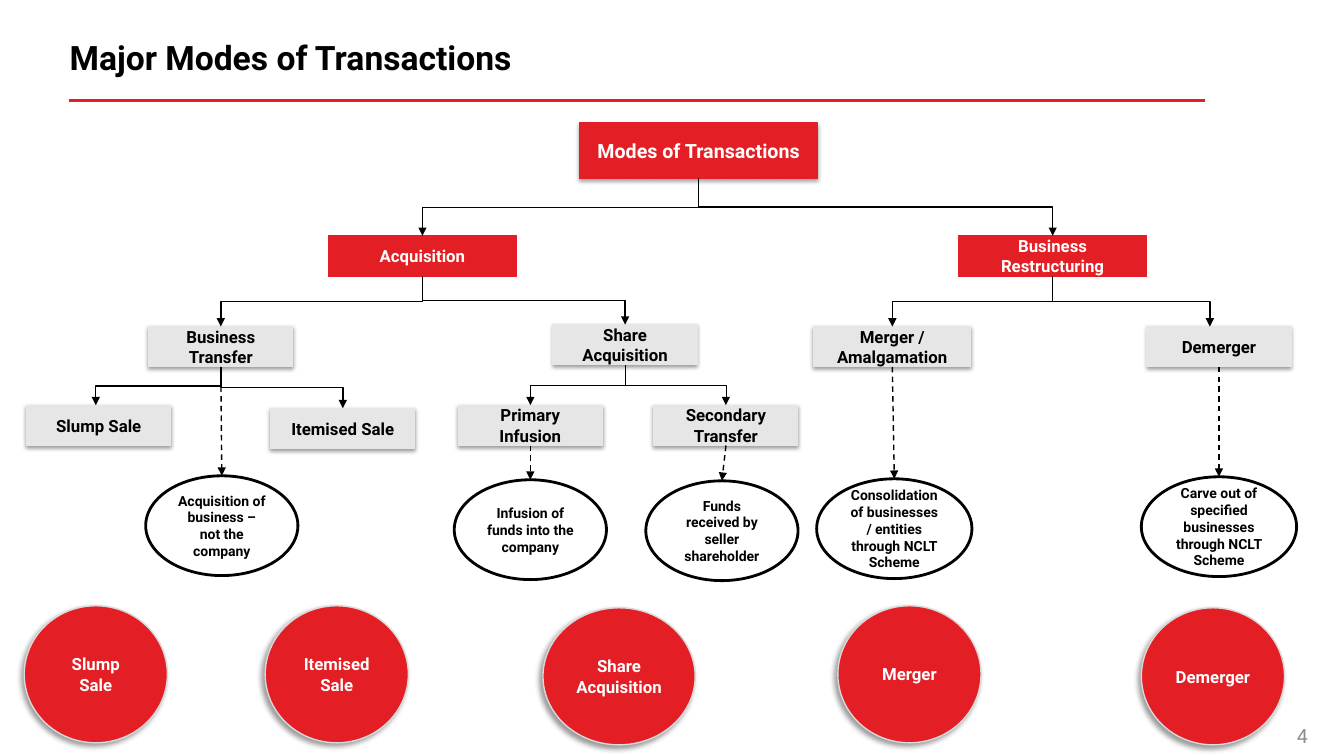
from lxml.etree import SubElement
from pptx import Presentation
from pptx.dml.color import RGBColor
from pptx.enum.dml import MSO_LINE_DASH_STYLE as Dash
from pptx.enum.shapes import MSO_CONNECTOR as Link, MSO_SHAPE as Geometry
from pptx.enum.text import MSO_ANCHOR as Anchor, MSO_AUTO_SIZE as AutoSize, PP_ALIGN as Align
from pptx.oxml.ns import qn
from pptx.util import Inches, Pt

FONT = "Roboto"
COLORS = {"red": "E31E24", "grey": "E7E6E6", "rim": "D9D9D9", "number": "8C8C8C",
          "white": "FFFFFF", "black": "000000"}
TITLE = "Major Modes of Transactions"
PAGE = "4"

# geometry, width, height, fill, outline, outline points, text colour, text points,
# shadow (opacity %, blur points, distance points, degrees)
STYLES = {
    "root": (Geometry.RECTANGLE, 2.36, 0.55, "red", "red", 0.75, "white", 14, (35, 3.1, 1.8, 90)),
    "branch": (Geometry.RECTANGLE, 1.87, 0.4, "red", "red", 0.75, "white", 12, None),
    "mode": (Geometry.RECTANGLE, 1.43, 0.4, "grey", "grey", 0.75, "black", 12, (38, 3.1, 1.6, 90)),
    "wide mode": (Geometry.RECTANGLE, 1.56, 0.4, "grey", "grey", 0.75, "black", 12, (38, 3.1, 1.6, 90)),
    "note": (Geometry.OVAL, 1.51, 0.99, "white", "black", 2, "black", 10, None),
    "wide note": (Geometry.OVAL, 1.54, 0.99, "white", "black", 2, "black", 10, None),
    "circle": (Geometry.OVAL, 1.42, 1.36, "red", "rim", 1, "white", 12, (40, 4, 3, 135)),
    "wide circle": (Geometry.OVAL, 1.51, 1.36, "red", "rim", 1, "white", 12, (40, 4, 3, 135)),
}

# key: text, style, centre x, top
NODES = {
    "modes": ("Modes of Transactions", "root", 6.93, 1.22),
    "acquisition": ("Acquisition", "branch", 4.19, 2.34),
    "restructuring": ("Business Restructuring", "branch", 10.44, 2.34),
    "transfer": ("Business Transfer", "mode", 2.19, 3.24),
    "share": ("Share Acquisition", "mode", 6.2, 3.22),
    "merger": ("Merger / Amalgamation", "wide mode", 8.85, 3.24),
    "demerger": ("Demerger", "mode", 12.09, 3.24),
    "slump": ("Slump Sale", "mode", 0.98, 4.02),
    "itemised": ("Itemised Sale", "mode", 3.4, 4.05),
    "primary": ("Primary Infusion", "mode", 5.26, 4.02),
    "secondary": ("Secondary Transfer", "mode", 7.2, 4.02),
    "business note": ("Acquisition of business – not the company", "note", 2.2, 4.72),
    "infusion note": ("Infusion of funds into the company", "note", 5.26, 4.76),
    "seller note": ("Funds received by seller shareholder", "note", 7.16, 4.77),
    "merger note": ("Consolidation of businesses / entities through NCLT Scheme",
                    "wide note", 8.87, 4.75),
    "demerger note": ("Carve out of specified businesses through NCLT Scheme",
                      "wide note", 12.09, 4.73),
    "slump circle": ("Slump Sale", "circle", 0.95, 6.01),
    "itemised circle": ("Itemised Sale", "circle", 3.34, 6.01),
    "share circle": ("Share Acquisition", "wide circle", 6.14, 6.03),
    "merger circle": ("Merger", "circle", 9.02, 6.01),
    "demerger circle": ("Demerger", "circle", 12.03, 6.03),
}

# parent, child, line points, x of the arrowhead where it is off the child's centre
BRANCHES = [
    ("modes", "acquisition", 0.5, None), ("modes", "restructuring", 1, None),
    ("acquisition", "transfer", 1, None), ("acquisition", "share", 1, None),
    ("restructuring", "merger", 1, None), ("restructuring", "demerger", 1, 12),
    ("transfer", "slump", 1, 0.95), ("transfer", "itemised", 1, None),
    ("share", "primary", 0.5, None), ("share", "secondary", 0.5, None),
]
EXPLANATIONS = [
    ("transfer", "business note"), ("primary", "infusion note"),
    ("secondary", "seller note"), ("merger", "merger note"), ("demerger", "demerger note"),
]


def rgb(color):
    return RGBColor.from_string(COLORS[color])


def write(frame, text, size, color, align, bold=True):
    frame.word_wrap = True
    frame.auto_size = AutoSize.NONE
    frame.vertical_anchor = Anchor.MIDDLE
    paragraph = frame.paragraphs[0]
    paragraph.text = text
    paragraph.alignment = align
    font = paragraph.runs[0].font
    font.name, font.size, font.bold = FONT, Pt(size), bold
    font.color.rgb = rgb(color)
    return paragraph


def cast_shadow(shape, opacity, blur, distance, degrees):
    effects = shape._element.spPr.find(qn("a:effectLst"))
    outer = SubElement(effects, qn("a:outerShdw"), blurRad=str(Pt(blur)), dist=str(Pt(distance)),
                       dir=str(degrees * 60000), algn="ctr", rotWithShape="0")
    tint = SubElement(outer, qn("a:srgbClr"), val=COLORS["black"])
    SubElement(tint, qn("a:alpha"), val=str(opacity * 1000))


def add_node(slide, text, style, centre, top):
    geometry, width, height, fill, outline, weight, ink, size, shadow = STYLES[style]
    node = slide.shapes.add_shape(geometry, Inches(centre - width / 2), Inches(top),
                                  Inches(width), Inches(height))
    node.fill.solid()
    node.fill.fore_color.rgb = rgb(fill)
    node.line.color.rgb = rgb(outline)
    node.line.width = Pt(weight)
    node.shadow.inherit = False
    if shadow:
        cast_shadow(node, *shadow)
    write(node.text_frame, text, size, ink, Align.CENTER)
    return node


def add_line(slide, kind, start, end, color, weight, dashed=False, arrow=True):
    line = slide.shapes.add_connector(kind, *start, *end)
    line.line.color.rgb = rgb(color)
    line.line.width = Pt(weight)
    if dashed:
        line.line.dash_style = Dash.DASH
    properties = line._element.spPr
    if arrow:
        SubElement(properties.find(qn("a:ln")), qn("a:tailEnd"), type="triangle")
    SubElement(properties, qn("a:effectLst"))
    return line


def leave_downwards(elbow, start, end):
    """Turn an elbow so that it runs down, across and down again."""
    across, down = abs(end[0] - start[0]), end[1] - start[1]
    elbow.left = (start[0] + end[0] - down) // 2
    elbow.top = (start[1] + end[1] - across) // 2
    elbow.width, elbow.height = down, across
    turn = elbow._element.spPr.find(qn("a:xfrm"))
    turn.attrib.pop("flipH", None)
    if end[0] > start[0]:
        turn.set("flipH", "1")
    turn.set("rot", str((270 if end[0] > start[0] else 90) * 60000))


def join(slide, parent, child, weight=1, head_x=None, elbow=False):
    start = (parent.left + parent.width // 2, parent.top + parent.height)
    end = (Inches(head_x) if head_x else child.left + child.width // 2, child.top)
    kind = Link.ELBOW if elbow else Link.STRAIGHT
    line = add_line(slide, kind, start, end, "black", weight, dashed=not elbow)
    line.begin_connect(parent, 2)
    if head_x is None:
        line.end_connect(child, 0)
    if elbow:
        leave_downwards(line, start, end)


def main():
    deck = Presentation()
    deck.slide_width, deck.slide_height = Inches(13.33), Inches(7.5)
    slide = deck.slides.add_slide(deck.slide_layouts[5])

    title = slide.shapes.title
    title.left, title.top = Inches(0.39), Inches(0.25)
    title.width, title.height = Inches(11.33), Inches(0.69)
    heading = write(title.text_frame, TITLE, 24, "black", Align.LEFT)
    heading.line_spacing = 0.9
    heading._p.get_or_add_pPr().set("marL", str(Inches(0.2)))
    add_line(slide, Link.STRAIGHT, (Inches(0.68), Inches(1)), (Inches(11.95), Inches(1)),
             "red", 2.25, arrow=False)

    number = slide.shapes.add_textbox(Inches(10.07), Inches(7.1), Inches(3), Inches(0.4))
    write(number.text_frame, PAGE, 14, "number", Align.RIGHT, bold=False)

    nodes = {key: add_node(slide, *node) for key, node in NODES.items()}
    for parent, child, weight, head_x in BRANCHES:
        join(slide, nodes[parent], nodes[child], weight, head_x, elbow=True)
    for mode, note in EXPLANATIONS:
        join(slide, nodes[mode], nodes[note])

    deck.save("out.pptx")


if __name__ == "__main__":
    main()
